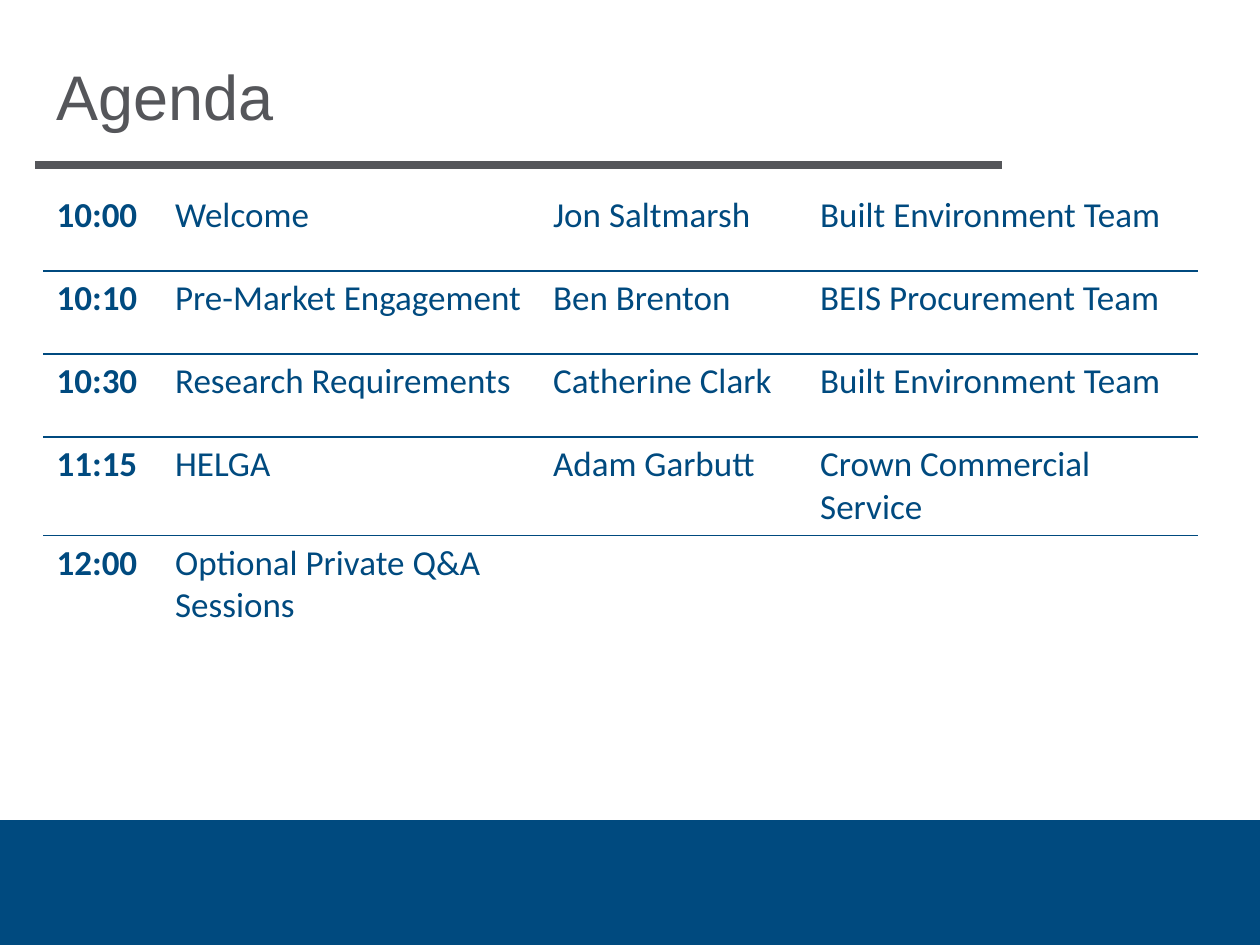
from dataclasses import dataclass
from typing import Any

from pptx import Presentation
from pptx.dml.color import RGBColor
from pptx.enum.shapes import MSO_CONNECTOR as Connector, MSO_SHAPE as Shape
from pptx.enum.text import MSO_ANCHOR as Anchor
from pptx.oxml.ns import qn
from pptx.util import Inches, Pt
from lxml.etree import SubElement

COLORS = {"blue": "004A7F", "grey": "55565A"}
TITLE = {"name": "Arial", "size": Pt(36), "bold": False}
BODY = {"name": "Calibri", "size": Pt(20), "bold": False}
TIME = {**BODY, "bold": True}
COLUMN_WIDTHS = [0.94, 3, 2.12, 3.09]
ROW_HEIGHTS = [0.66, 0.66, 0.66, 0.78, 0.78]
AGENDA = [
    ("10:00", "Welcome", "Jon Saltmarsh", "Built Environment Team"),
    ("10:10", "Pre-Market Engagement", "Ben Brenton", "BEIS Procurement Team"),
    ("10:30", "Research Requirements", "Catherine Clark", "Built Environment Team"),
    ("11:15", "HELGA", "Adam Garbutt", "Crown Commercial Service"),
    ("12:00", "Optional Private Q&A Sessions", "", ""),
]


@dataclass
class SlideBuilder:
    """Draws styled elements on the current slide."""

    slide: Any
    colors: dict

    def color(self, name):
        return RGBColor.from_string(self.colors[name])

    def style_text(self, paragraph, text, style, color):
        paragraph.text = text
        for font in [paragraph.font, *(run.font for run in paragraph.runs)]:
            for attribute, value in style.items():
                setattr(font, attribute, value)
            font.color.rgb = self.color(color)

    def band(self, left, top, width, height, color):
        shape = self.slide.shapes.add_shape(
            Shape.RECTANGLE, Inches(left), Inches(top), Inches(width), Inches(height))
        shape.shadow.inherit = False
        shape.fill.solid()
        shape.fill.fore_color.rgb = self.color(color)
        shape.line.fill.background()

    def rule(self, left, right, top, width, color):
        connector = self.slide.shapes.add_connector(
            Connector.STRAIGHT, Inches(left), Inches(top), Inches(right), Inches(top))
        connector.line.width = Pt(width)
        connector.line.color.rgb = self.color(color)
        SubElement(connector._element.spPr, qn("a:effectLst"))

    def title(self, text, left, top, width, height):
        box = self.slide.shapes.add_textbox(
            Inches(left), Inches(top), Inches(width), Inches(height))
        frame = box.text_frame
        frame.word_wrap = True
        frame.vertical_anchor = Anchor.MIDDLE
        self.style_text(frame.paragraphs[0], text, TITLE, "grey")

    def border(self, cell, side, color):
        line = SubElement(cell._tc.get_or_add_tcPr(), qn(f"a:ln{side}"), w=str(Pt(1)))
        fill = SubElement(line, qn("a:solidFill"))
        SubElement(fill, qn("a:srgbClr"), val=self.colors[color])

    def table(self, rows, left, top, widths, heights):
        table = self.slide.shapes.add_table(
            len(rows), len(widths), Inches(left), Inches(top),
            Inches(sum(widths)), Inches(sum(heights))).table
        table.first_row = table.horz_banding = False
        for column, width in zip(table.columns, widths):
            column.width = Inches(width)
        for row, height in zip(table.rows, heights):
            row.height = Inches(height)
        for row_index, texts in enumerate(rows):
            for column_index, text in enumerate(texts):
                cell = table.cell(row_index, column_index)
                style = BODY if column_index else TIME
                self.style_text(cell.text_frame.paragraphs[0], text, style, "blue")
                if row_index > 0:
                    self.border(cell, "T", "blue")
                if row_index < len(rows) - 1:
                    self.border(cell, "B", "blue")
                cell.fill.background()


def main():
    presentation = Presentation()
    presentation.slide_width = Inches(10)
    presentation.slide_height = Inches(7.5)
    slide = presentation.slides.add_slide(presentation.slide_layouts[6])
    builder = SlideBuilder(slide, COLORS)
    builder.band(0, 6.51, 10, 0.99, "blue")
    builder.rule(0.28, 7.95, 1.31, 4.5, "grey")
    builder.title("Agenda", 0.35, 0.29, 9.15, 0.94)
    builder.table(AGENDA, 0.35, 1.49, COLUMN_WIDTHS, ROW_HEIGHTS)
    presentation.save("out.pptx")


if __name__ == "__main__":
    main()
